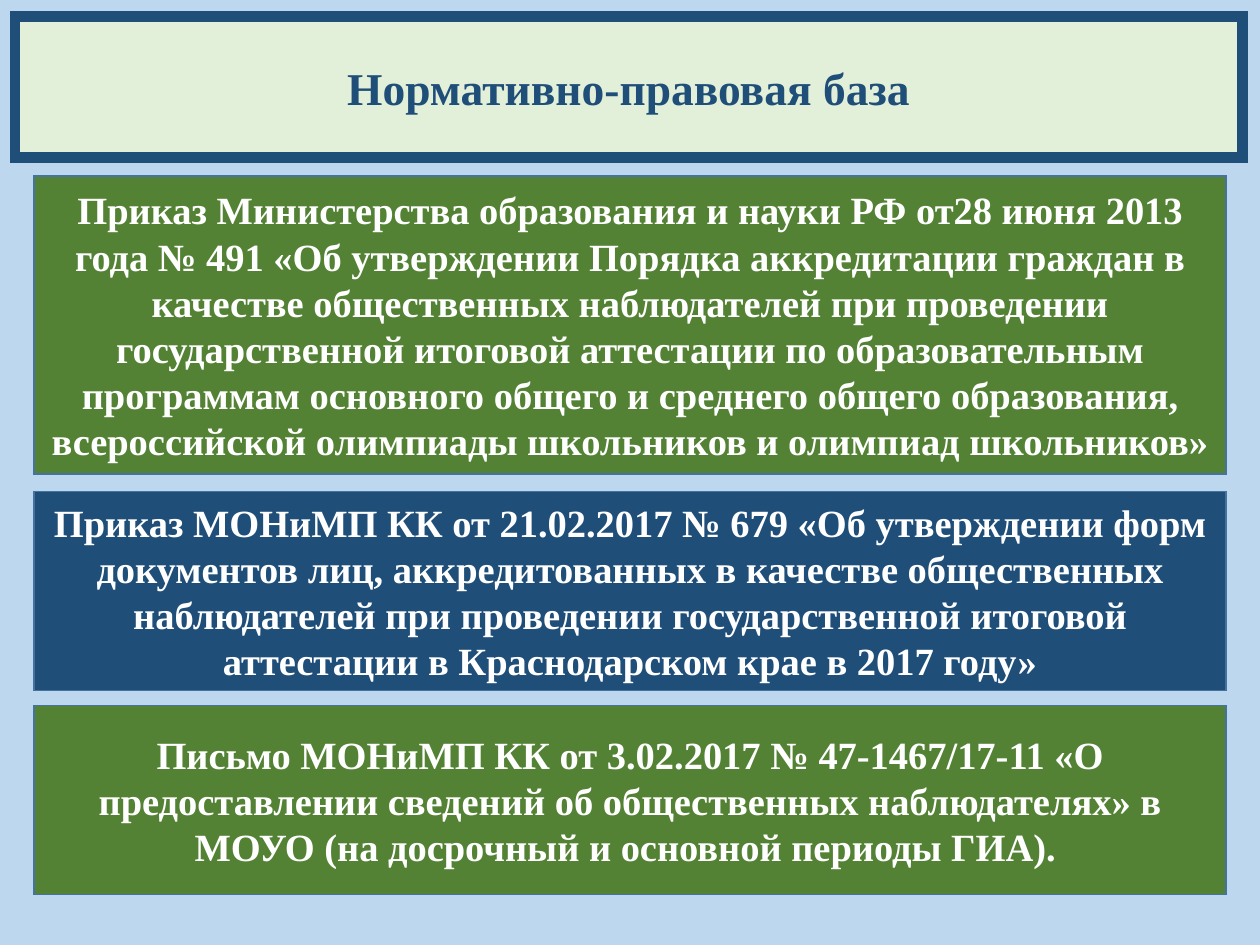
from lxml import etree
from pptx import Presentation
from pptx.dml.color import RGBColor
from pptx.enum import shapes, text
from pptx.oxml import ns
from pptx.util import Inches, Pt

NAVY = RGBColor(0x1F, 0x4E, 0x79)
GREEN = RGBColor(0x54, 0x82, 0x35)
MINT = RGBColor(0xE2, 0xF0, 0xD9)
SKY = RGBColor(0xBD, 0xD7, 0xEE)
EDGE = RGBColor(0x43, 0x73, 0x9E)
WHITE = RGBColor(0xFF, 0xFF, 0xFF)


def style(box, words, fill, edge, width, size, color):
    """Fill and outline a box and set its centred bold text."""
    box.fill.solid()
    box.fill.fore_color.rgb = fill
    box.line.color.rgb = edge
    box.line.width = Pt(width)
    line = box.line._get_or_add_ln()
    etree.SubElement(line, ns.qn("a:miter"), lim="800000")

    frame = box.text_frame
    frame.text = words
    frame.word_wrap = True
    frame.auto_size = text.MSO_AUTO_SIZE.NONE
    frame.vertical_anchor = text.MSO_ANCHOR.MIDDLE
    par = frame.paragraphs[0]
    par.alignment = text.PP_ALIGN.CENTER
    font = par.runs[0].font
    look = {"name": "Times New Roman", "size": Pt(size), "bold": True}
    for key, value in look.items():
        setattr(font, key, value)
    font.color.rgb = color


deck = Presentation()
deck.slide_width, deck.slide_height = Inches(10), Inches(7.5)
slide = deck.slides.add_slide(deck.slide_layouts[5])
slide.background.fill.solid()
slide.background.fill.fore_color.rgb = SKY

title = slide.shapes.title
title.left, title.top = Inches(0.12), Inches(0.13)
title.width, title.height = Inches(9.74), Inches(1.12)
style(title, "Нормативно-правовая база", MINT, NAVY, 6, 26, NAVY)

acts = [
    (1.4, 2.36, GREEN,
     "Приказ Министерства образования и науки РФ от28 июня 2013 года № 491 "
     "«Об утверждении Порядка аккредитации граждан в качестве общественных "
     "наблюдателей при проведении государственной итоговой аттестации по "
     "образовательным программам основного общего и среднего общего "
     "образования, всероссийской олимпиады школьников и олимпиад школьников»"),
    (3.9, 1.58, NAVY,
     "Приказ МОНиМП КК от 21.02.2017 № 679 «Об утверждении форм документов "
     "лиц, аккредитованных в качестве общественных наблюдателей при "
     "проведении государственной итоговой аттестации в Краснодарском крае "
     "в 2017 году»"),
    (5.6, 1.5, GREEN,
     "Письмо МОНиМП КК от 3.02.2017 № 47-1467/17-11 «О предоставлении "
     "сведений об общественных наблюдателях» в МОУО (на досрочный и "
     "основной периоды ГИА). "),
]
for top, height, fill, words in acts:
    box = slide.shapes.add_shape(
        shapes.MSO_SHAPE.RECTANGLE,
        Inches(0.27), Inches(top), Inches(9.46), Inches(height))
    box.shadow.inherit = False
    style(box, words, fill, EDGE, 1, 22, WHITE)

deck.save("out.pptx")
